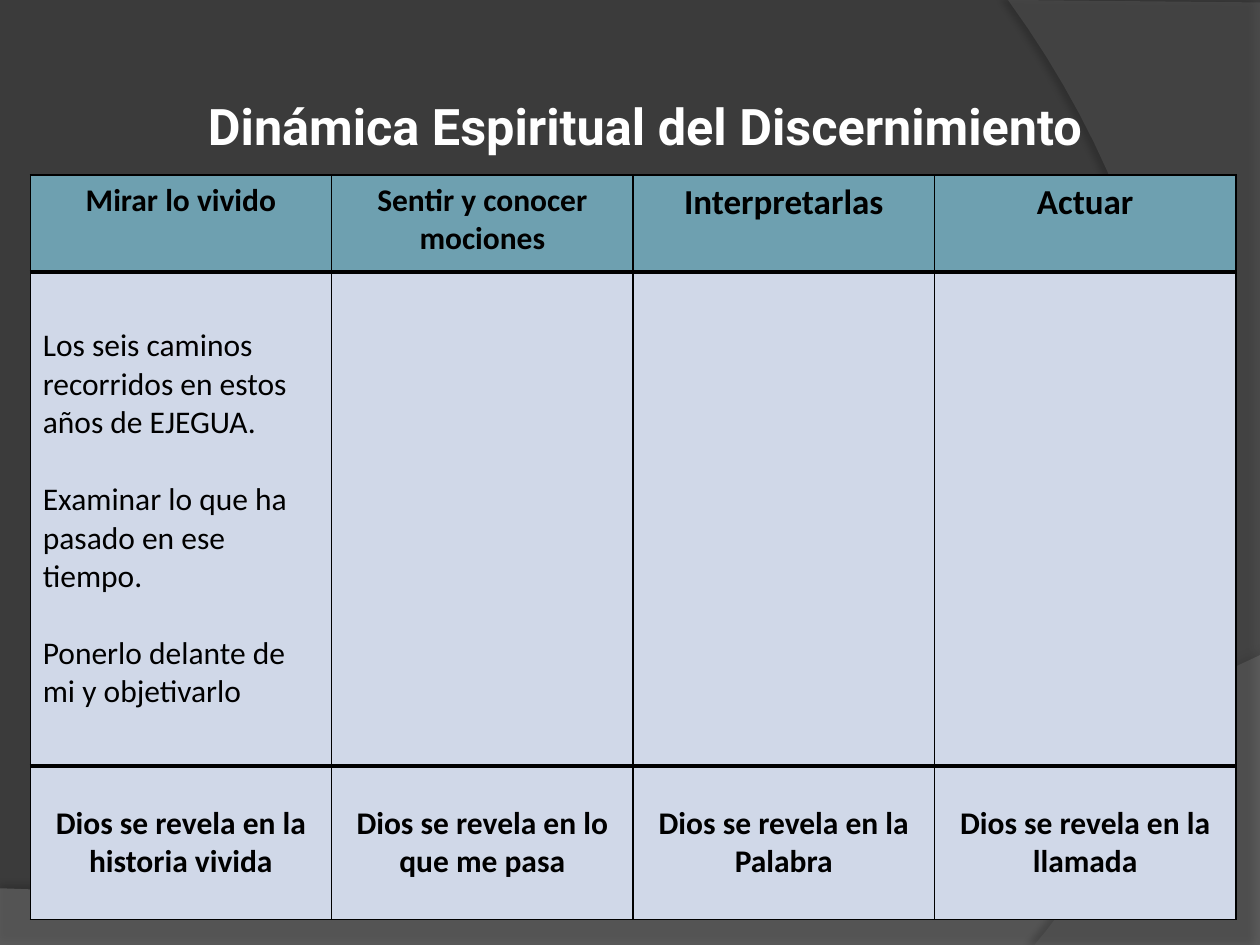
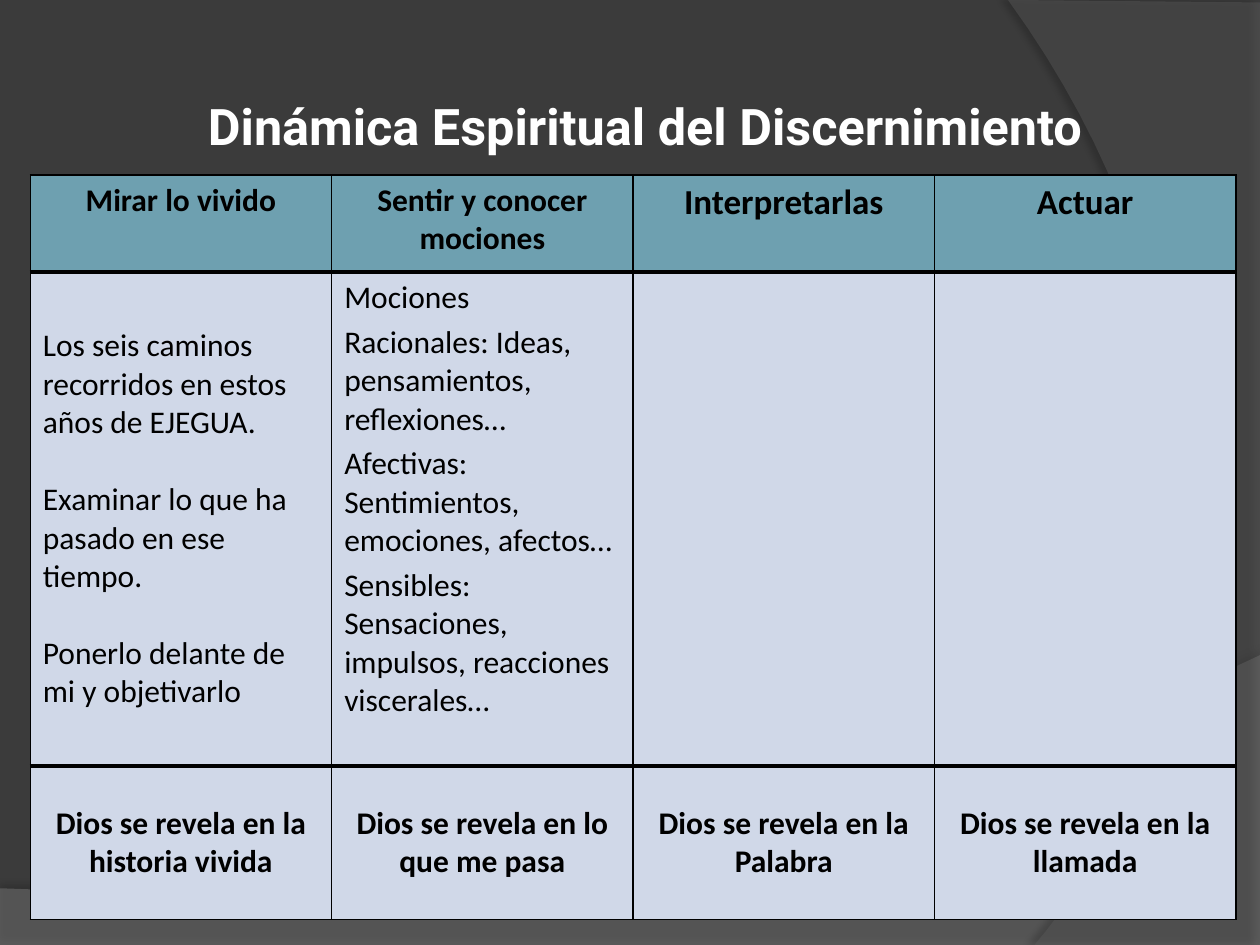
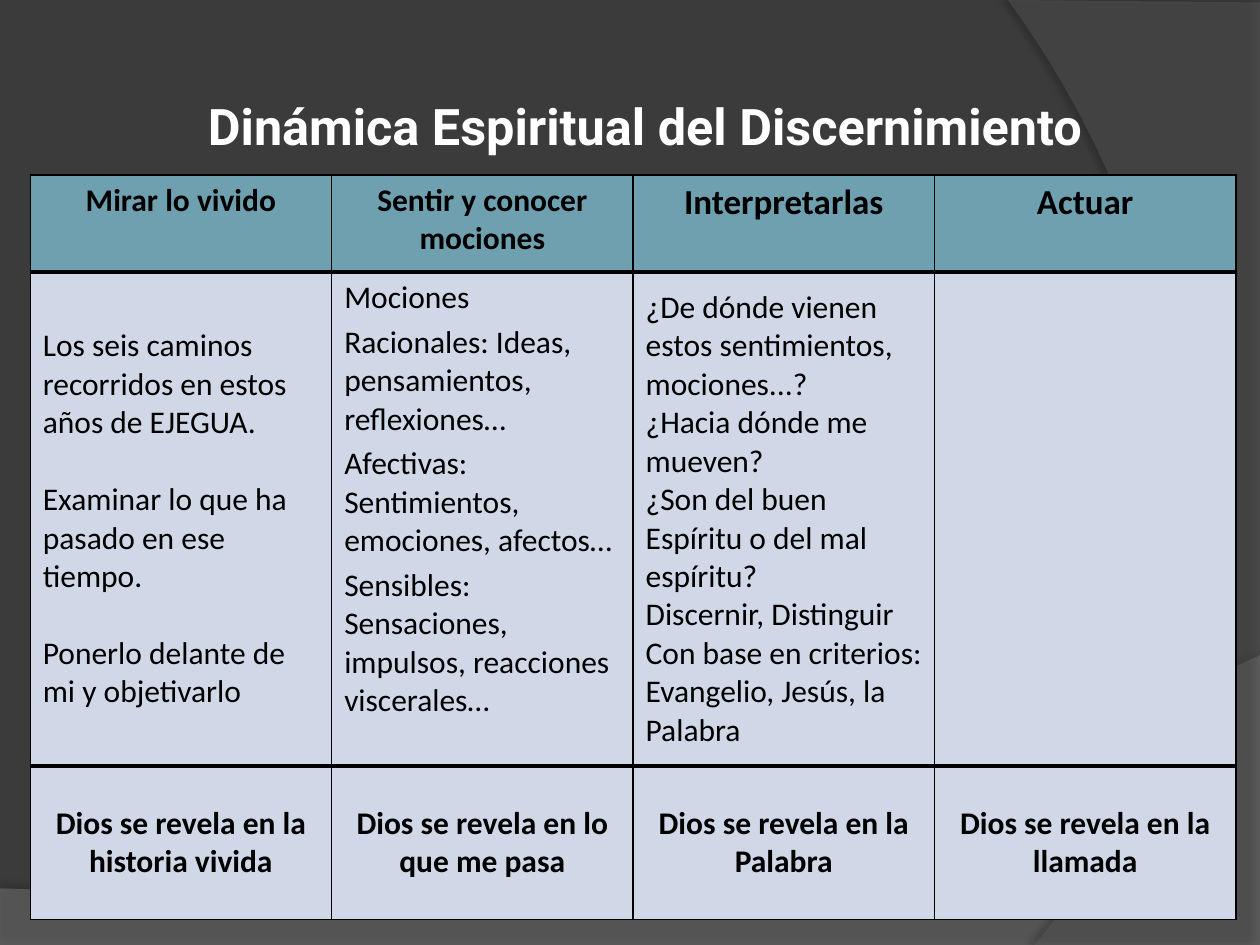
from dataclasses import dataclass

from lxml.etree import SubElement
from pptx import Presentation
from pptx.dml.color import RGBColor
from pptx.enum.text import MSO_ANCHOR, PP_ALIGN
from pptx.oxml.ns import qn
from pptx.util import Emu, Inches, Pt


@dataclass(frozen=True)
class Theme:
    background: str = "3B3B3B"
    wave: str = "7F7F7F"
    arc: str = "5E5E5E"
    ink: str = "000000"
    light: str = "FFFFFF"
    header: str = "6EA0B0"
    body: str = "D0D8E8"
    title_font: str = "Roboto"
    table_font: str = "Calibri"
    title_size: float = 28.8
    large_size: float = 20
    text_size: float = 18
    thin: float = 1
    thick: float = 3


THEME = Theme()

# The slide is a grid of 10 columns by 7.5 rows of equal square units
COLUMNS, ROWS = 10, 7.5
SLIDE_WIDTH = Inches(10)
UNIT = SLIDE_WIDTH // COLUMNS

TITLE = "Dinámica Espiritual del Discernimiento"
TITLE_AREA = (1.6, 0.68, 7.18, 0.63)
TABLE_AREA = (0.24, 1.39, 9.57, 5.91)
ROW_HEIGHTS = (0.77, 3.92, 1.22)

STEPS = [
    ("Mirar lo vivido", THEME.text_size),
    ("Sentir y conocer mociones", THEME.text_size),
    ("Interpretarlas", THEME.large_size),
    ("Actuar", THEME.large_size),
]
REVELATIONS = [
    f"Dios se revela en {place}"
    for place in ("la historia vivida", "lo que me pasa", "la Palabra", "la llamada")
]

# Each step's explanation: paragraphs, gap between them in points, anchor
EXPLANATIONS = [
    (["Los seis caminos recorridos en estos años de EJEGUA.",
      "Examinar lo que ha pasado en ese tiempo.",
      "Ponerlo delante de mi y objetivarlo"], 22, MSO_ANCHOR.MIDDLE),
    (["Mociones",
      "Racionales: Ideas, pensamientos, reflexiones…",
      "Afectivas: Sentimientos, emociones, afectos…",
      "Sensibles: Sensaciones, impulsos, reacciones viscerales…"],
     3.6, MSO_ANCHOR.TOP),
    (["¿De dónde vienen estos sentimientos, mociones...?",
      "¿Hacia dónde me mueven?",
      "¿Son del buen Espíritu o del mal espíritu?",
      "Discernir, Distinguir",
      "Con base en criterios: Evangelio, Jesús, la Palabra"],
     0, MSO_ANCHOR.MIDDLE),
]


def grid(*units):
    return [Emu(round(unit * UNIT)) for unit in units]


def apply(target, formats):
    for name, value in formats.items():
        setattr(target, name, value)


def paint(fill, color):
    fill.solid()
    fill.fore_color.rgb = RGBColor.from_string(color)


def write(frame, paragraphs, size, font, color, bold=False,
          align=PP_ALIGN.LEFT, gap=0):
    for index, text in enumerate(paragraphs):
        paragraph = frame.add_paragraph() if index else frame.paragraphs[0]
        paragraph.text = text
        apply(paragraph, {"alignment": align, "space_before": Pt(gap if index else 0)})
        apply(paragraph.font, {"name": font, "size": Pt(size), "bold": bold})
        paragraph.font.color.rgb = RGBColor.from_string(color)


# Backdrop
def curve(start, control_1, control_2, end, steps=40):
    """Points along a cubic curve, both ends included."""
    points = []
    for step in range(steps + 1):
        t = step / steps
        weights = ((1 - t) ** 3, 3 * t * (1 - t) ** 2, 3 * t ** 2 * (1 - t), t ** 3)
        points.append(tuple(
            sum(weight * value for weight, value in zip(weights, axis))
            for axis in zip(start, control_1, control_2, end)))
    return points


def add_swoosh(slide, outline, color, opacity, shadow):
    first, *others = [grid(*point) for point in outline]
    builder = slide.shapes.build_freeform(*first)
    builder.add_line_segments(others, close=True)
    swoosh = builder.convert_to_shape()
    paint(swoosh.fill, color)
    swoosh.line.fill.background()
    swoosh.shadow.inherit = False

    properties = swoosh._element.spPr
    tint = properties.find(qn("a:solidFill"))[0]
    SubElement(tint, qn("a:alpha"), val=str(opacity * 1000))
    shadow_opacity, distance, degrees = shadow
    cast = SubElement(
        properties.find(qn("a:effectLst")), qn("a:outerShdw"),
        blurRad=str(Pt(4)), dist=str(Pt(distance)), dir=str(degrees * 60000),
        algn="ctr", rotWithShape="0")
    shade = SubElement(cast, qn("a:srgbClr"), val=THEME.ink)
    SubElement(shade, qn("a:alpha"), val=str(shadow_opacity * 1000))


def add_backdrop(slide):
    wave = [(0, ROWS), (COLUMNS, ROWS)]
    wave += curve((COLUMNS, 5.2), (5.59, 7.29), (3.91, 7.19), (0, 7.05))
    add_swoosh(slide, wave, THEME.wave, 45, (35, 3.5, 270))

    arc = [(COLUMNS, 0.02), (COLUMNS, ROWS)]
    arc += curve((8.21, ROWS), (9.35, 6.19), (10.18, 3), (8, 0))
    add_swoosh(slide, arc, THEME.arc, 40, (45, 4, 180))


# Title
def add_title(slide):
    frame = slide.shapes.add_textbox(*grid(*TITLE_AREA)).text_frame
    margins = ("margin_left", "margin_right", "margin_top", "margin_bottom")
    apply(frame, dict.fromkeys(margins, Inches(0.05)))
    apply(frame, {"word_wrap": True, "vertical_anchor": MSO_ANCHOR.MIDDLE})
    write(frame, [TITLE], THEME.title_size, THEME.title_font, THEME.light, bold=True)


# Table
def style_cell(cell, color, anchor, top, bottom):
    properties = cell._tc.get_or_add_tcPr()
    borders = {"lnL": THEME.thin, "lnR": THEME.thin, "lnT": top, "lnB": bottom}
    for side, width in borders.items():
        line = SubElement(properties, qn(f"a:{side}"), w=str(Pt(width)))
        SubElement(SubElement(line, qn("a:solidFill")), qn("a:srgbClr"), val=THEME.ink)
    paint(cell.fill, color)
    cell.vertical_anchor = anchor


def add_steps_table(slide, explained):
    table = slide.shapes.add_table(
        len(ROW_HEIGHTS), len(STEPS), *grid(*TABLE_AREA)).table
    apply(table, {"first_row": False, "horz_banding": False})
    for row, height in zip(table.rows, grid(*ROW_HEIGHTS)):
        row.height = height

    label = {"font": THEME.table_font, "color": THEME.ink}
    heading = {**label, "bold": True, "align": PP_ALIGN.CENTER}
    for column, ((step, size), revelation) in enumerate(zip(STEPS, REVELATIONS)):
        header, body, footer = (table.cell(row, column) for row in range(3))
        shown = column < explained
        paragraphs, gap, anchor = (
            EXPLANATIONS[column] if shown else ([], 0, MSO_ANCHOR.TOP))

        style_cell(header, THEME.header, MSO_ANCHOR.TOP, THEME.thin, THEME.thick)
        style_cell(body, THEME.body, anchor, THEME.thick, THEME.thick)
        style_cell(footer, THEME.body, MSO_ANCHOR.MIDDLE, THEME.thick, THEME.thin)
        write(header.text_frame, [step], size, **heading)
        write(body.text_frame, paragraphs, THEME.text_size, gap=gap, **label)
        write(footer.text_frame, [revelation], THEME.text_size, **heading)


def main():
    deck = Presentation()
    apply(deck, {"slide_width": SLIDE_WIDTH, "slide_height": Emu(int(ROWS * UNIT))})
    paint(deck.slide_master.background.fill, THEME.background)
    blank = deck.slide_layouts[6]

    # Every slide explains one more step
    for explained in range(1, len(EXPLANATIONS) + 1):
        slide = deck.slides.add_slide(blank)
        add_backdrop(slide)
        add_title(slide)
        add_steps_table(slide, explained)
    deck.save("out.pptx")


if __name__ == "__main__":
    main()
